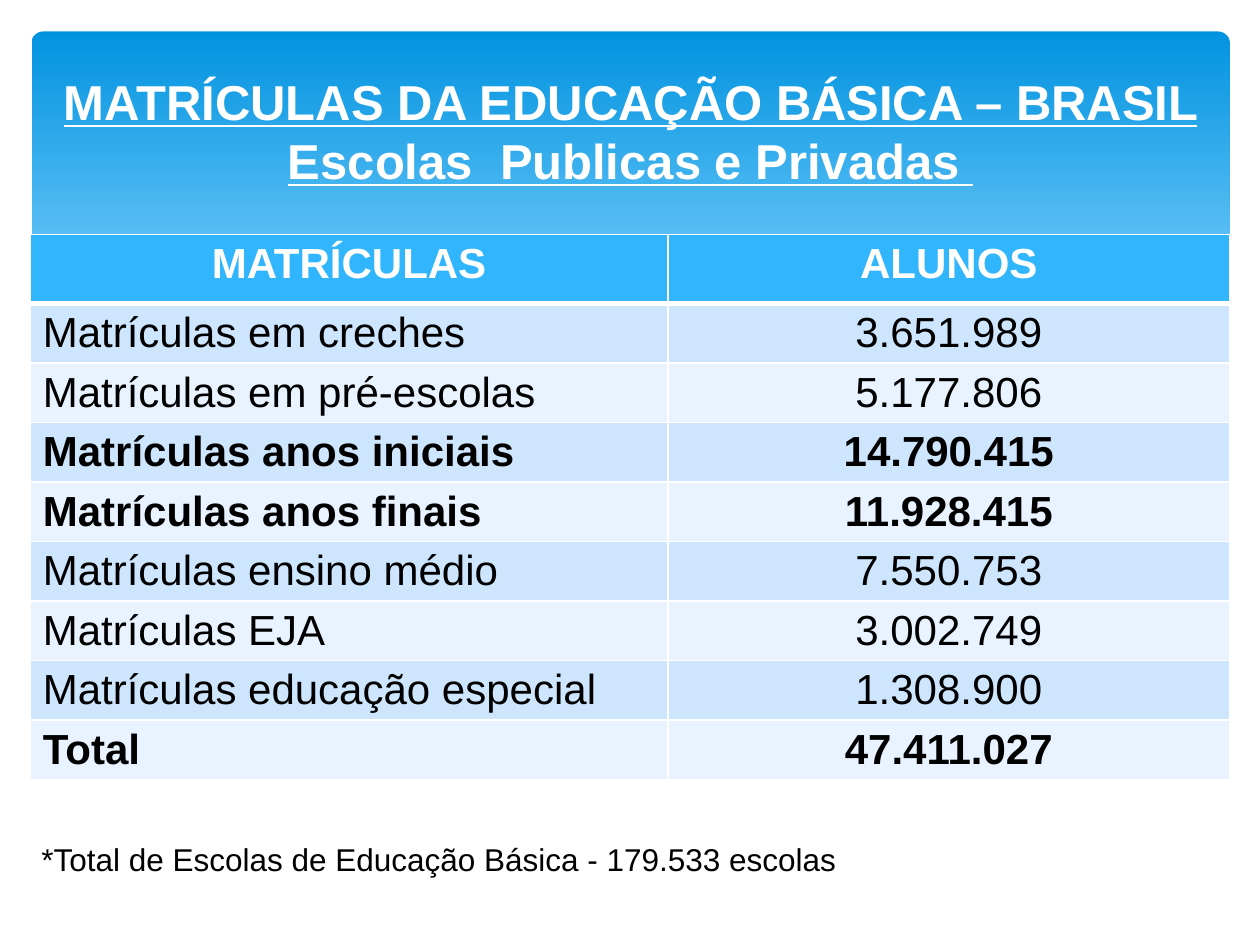
from lxml import etree
from pptx import Presentation
from pptx import util as u
from pptx.dml.color import RGBColor
from pptx.enum import shapes, text
from pptx.oxml import ns

WHITE = RGBColor(0xFF, 0xFF, 0xFF)
BLACK = RGBColor(0, 0, 0)
DEEP = RGBColor(0x02, 0x93, 0xE0)
SKY = RGBColor(0x83, 0xD3, 0xFE)
HEAD = RGBColor(0x31, 0xB6, 0xFD)
BANDS = [RGBColor(0xCE, 0xE5, 0xFE), RGBColor(0xE8, 0xF3, 0xFF)]

TITLE = "MATRÍCULAS DA EDUCAÇÃO BÁSICA – BRASIL Escolas  Publicas e Privadas "
NOTE = "*Total de Escolas de Educação Básica - 179.533 escolas"
ROWS = [
    ("MATRÍCULAS", "ALUNOS", True),
    ("Matrículas em creches", "3.651.989", False),
    ("Matrículas em pré-escolas", "5.177.806", False),
    ("Matrículas anos iniciais", "14.790.415", True),
    ("Matrículas anos finais", "11.928.415", True),
    ("Matrículas ensino médio", "7.550.753", False),
    ("Matrículas EJA", "3.002.749", False),
    ("Matrículas educação especial", "1.308.900", False),
    ("Total", "47.411.027", True),
]
WAVE = [
    (9.77, 2.46), (9.3, 2.62), (8.75, 2.73), (8.09, 2.77), (7.44, 2.74),
    (6.68, 2.65), (5.79, 2.5), (5.03, 2.33), (4.47, 2.2), (3.91, 2.07),
    (3.4, 1.97), (2.92, 1.9), (2.5, 1.86), (2.11, 1.84), (1.77, 1.84),
    (1.46, 1.85), (1.19, 1.87), (0.95, 1.91), (0.67, 1.97), (0.46, 2.03),
    (0.23, 2.13), (0.23, 3.29), (9.77, 3.29),
]
CREST = [
    (6.13, 2.57), (6.53, 2.46), (6.95, 2.35), (7.48, 2.23), (8.06, 2.1),
    (8.66, 1.99), (9.1, 1.92), (9.51, 1.87), (9.75, 1.85),
]


class Deck:
    font = "Arial"

    def __init__(self):
        self.prs = Presentation()
        self.prs.slide_width = u.Inches(10)
        self.prs.slide_height = u.Inches(7.5)
        self.slide = self.prs.slides.add_slide(self.prs.slide_layouts[5])

    def style(self, par, size, color, bold=False, align=text.PP_ALIGN.LEFT):
        par.alignment = align
        par.font.name = self.font
        par.font.size = u.Pt(size)
        par.font.bold = bold
        par.font.color.rgb = color

    def panel(self, *box):
        shape = self.slide.shapes.add_shape(
            shapes.MSO_SHAPE.ROUNDED_RECTANGLE, *map(u.Inches, box))
        shape.adjustments[0] = 0.034
        shape.shadow.inherit = False
        shape.line.fill.background()
        shape.fill.gradient()
        shape.fill.gradient_angle = 270
        for stop, color, place in zip(
                shape.fill.gradient_stops, (DEEP, SKY), (0, 0.9)):
            stop.color.rgb = color
            stop.position = place

    def curve(self, points, closed):
        pen = self.slide.shapes.build_freeform(
            *points[0], scale=u.Inches(1))
        pen.add_line_segments(points[1:], close=closed)
        shape = pen.convert_to_shape()
        shape.shadow.inherit = False
        if closed:
            shape.fill.solid()
            shape.fill.fore_color.rgb = WHITE
            shape.line.fill.background()
        else:
            shape.fill.background()
            shape.line.color.rgb = WHITE
            shape.line.width = u.Pt(0.25)

    def border(self, cell, side, width):
        props = cell._tc.get_or_add_tcPr()
        line = etree.SubElement(
            props, ns.qn(f"a:ln{side}"), w=str(u.Pt(width)))
        fill = etree.SubElement(line, ns.qn("a:solidFill"))
        etree.SubElement(fill, ns.qn("a:srgbClr"), val=str(WHITE))

    def table(self, rows, left, top, widths, head, step):
        grid = self.slide.shapes.add_table(
            len(rows), len(widths), u.Inches(left), u.Inches(top),
            u.Inches(sum(widths)),
            u.Inches(head + step * (len(rows) - 1))).table
        for col, width in zip(grid.columns, widths):
            col.width = u.Inches(width)
        for i, (*words, bold) in enumerate(rows):
            grid.rows[i].height = u.Inches(step if i else head)
            for j, word in enumerate(words):
                cell = grid.cell(i, j)
                for side in "LRTB":
                    thick = (i, side) in ((0, "B"), (1, "T"))
                    self.border(cell, side, 3 if thick else 1)
                cell.fill.solid()
                cell.fill.fore_color.rgb = BANDS[(i - 1) % 2] if i else HEAD
                cell.text = word
                mid = i == 0 or j == 1
                self.style(
                    cell.text_frame.paragraphs[0], 24,
                    BLACK if i else WHITE, bold,
                    text.PP_ALIGN.CENTER if mid else text.PP_ALIGN.LEFT)

    def note(self, words, *box):
        frame = self.slide.shapes.add_textbox(
            *map(u.Inches, box)).text_frame
        frame.word_wrap = True
        frame.text = words
        self.style(frame.paragraphs[0], 18, BLACK)

    def title(self, words, *box):
        shape = self.slide.shapes.title
        shape.left, shape.top, shape.width, shape.height = map(u.Inches, box)
        shape.element.getparent().append(shape.element)
        frame = shape.text_frame
        frame.text = words
        frame.word_wrap = True
        frame.auto_size = text.MSO_AUTO_SIZE.NONE
        frame.vertical_anchor = text.MSO_ANCHOR.TOP
        par = frame.paragraphs[0]
        self.style(par, 28, WHITE, True, text.PP_ALIGN.CENTER)
        par.font.underline = True


def main():
    deck = Deck()
    deck.panel(0.25, 0.25, 9.51, 2.7)
    deck.curve(CREST, False)
    deck.curve(WAVE, True)
    deck.table(ROWS, 0.24, 1.86, (5.06, 4.46), 0.55, 0.47)
    deck.note(NOTE, 0.23, 6.62, 9.53, 0.4)
    deck.title(TITLE, 0.28, 0.52, 9.45, 1.04)
    deck.prs.save("out.pptx")


if __name__ == "__main__":
    main()
